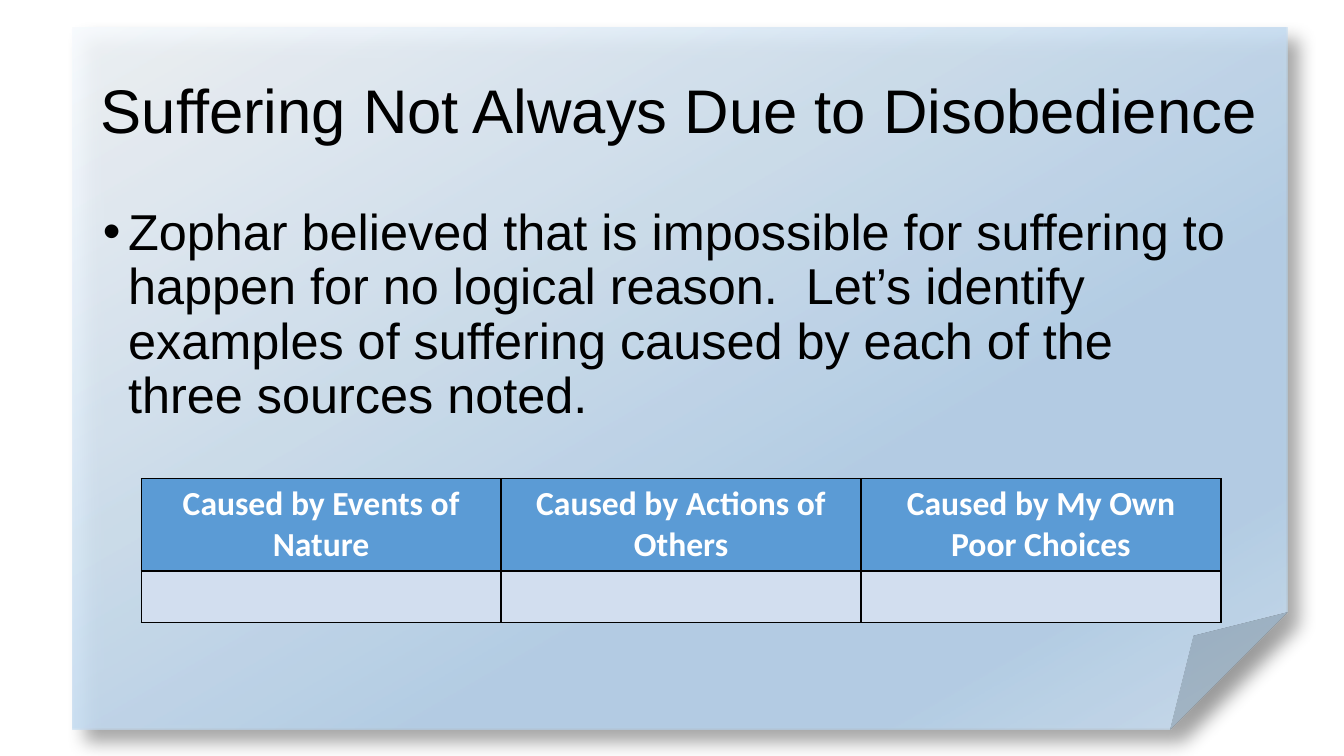
import pptx
import pptx.dml.color
import pptx.enum.shapes
import pptx.enum.text
import pptx.oxml
import pptx.util
from pptx.util import Inches, Pt

COLORS = {
    "text": "000000",
    "border": "000000",
    "shadow": "000000",
    "header_text": "FFFFFF",
    "header_fill": "5B9BD5",
    "answer_fill": "D2DEEF",
    "paper_light": "F7FAFD",
    "paper_mid": "B5D2EC",
    "paper_end": "CEE1F2",
}
NS = 'xmlns:a="http://schemas.openxmlformats.org/drawingml/2006/main"'
ALIGN = pptx.enum.text.PP_ALIGN
ANCHOR = pptx.enum.text.MSO_ANCHOR


def rgb(name):
    return pptx.dml.color.RGBColor.from_string(COLORS[name])


def add_run(paragraph, text, font, size, color, bold=False):
    run = paragraph.add_run()
    run.text = text
    run.font.name = font
    run.font.size = Pt(size)
    run.font.bold = bold
    run.font.color.rgb = rgb(color)


presentation = pptx.Presentation()
presentation.slide_width = Inches(13.33)
presentation.slide_height = Inches(7.5)
slide = presentation.slides.add_slide(presentation.slide_layouts[1])

# Folded paper behind the text
paper = slide.shapes.add_shape(
    pptx.enum.shapes.MSO_SHAPE.FOLDED_CORNER,
    Inches(0.72), Inches(0.27), Inches(12.05), Inches(6.97))
paper.line.fill.background()
stops = "".join(
    f'<a:gs pos="{position * 1000}"><a:srgbClr val="{COLORS[name]}">'
    '<a:alpha val="87000"/></a:srgbClr></a:gs>'
    for position, name in [(0, "paper_light"), (64, "paper_mid"),
                           (83, "paper_mid"), (100, "paper_end")])
gradient = pptx.oxml.parse_xml(
    f'<a:gradFill {NS} rotWithShape="1"><a:gsLst>{stops}</a:gsLst>'
    '<a:lin ang="3600000" scaled="0"/></a:gradFill>')
shadow = pptx.oxml.parse_xml(
    f'<a:effectLst {NS}><a:outerShdw blurRad="{Pt(13)}" dist="{Pt(13)}" '
    f'dir="2700000" algn="tl" rotWithShape="0"><a:srgbClr val="{COLORS["shadow"]}">'
    '<a:alpha val="40000"/></a:srgbClr></a:outerShdw></a:effectLst>')
paper_properties = paper._element.spPr
paper_properties.prstGeom.addnext(gradient)
paper_properties.append(shadow)
slide.shapes._spTree.insert(2, paper._element)

# Title
title = slide.shapes.title
title.left, title.top = Inches(0.77), Inches(0.4)
title.width, title.height = Inches(11.94), Inches(1.45)
title.text_frame.vertical_anchor = ANCHOR.MIDDLE
title.text_frame.auto_size = pptx.enum.text.MSO_AUTO_SIZE.NONE
heading = title.text_frame.paragraphs[0]
heading.alignment = ALIGN.CENTER
heading.line_spacing = 0.9
add_run(heading, "Suffering Not Always Due to Disobedience", "Arial", 44, "text")

# Discussion prompt
body = slide.placeholders[1]
body.left, body.top = Inches(0.92), Inches(2)
body.width, body.height = Inches(11.5), Inches(4.76)
body.text_frame.auto_size = pptx.enum.text.MSO_AUTO_SIZE.NONE
prompt = body.text_frame.paragraphs[0]
prompt_properties = prompt._p.get_or_add_pPr()
prompt_properties.set("marL", str(Inches(0.25)))
prompt_properties.set("indent", str(-Inches(0.25)))
for bullet in ('<a:buFont {} typeface="Arial"/>', '<a:buChar {} char="•"/>'):
    prompt_properties.append(pptx.oxml.parse_xml(bullet.format(NS)))
prompt.line_spacing = 0.9
prompt.space_before = Pt(0)
add_run(prompt,
        "Zophar believed that is impossible for suffering to happen for no "
        "logical reason.  Let’s identify examples of suffering caused by each "
        "of the three sources noted.", "Arial", 36, "text")

# Table of causes, with an empty row for answers
causes = ["Caused by Events of Nature", "Caused by Actions of Others",
          "Caused by My Own Poor Choices"]
table = slide.shapes.add_table(
    2, len(causes), Inches(1.4), Inches(4.75), Inches(10.72), Inches(1.42)).table
table.rows[0].height = Inches(0.91)
table.rows[1].height = Inches(0.51)
for column, cause in enumerate(causes):
    table.columns[column].width = Inches(3.57)
    header, answer = table.cell(0, column), table.cell(1, column)
    header.vertical_anchor = ANCHOR.MIDDLE
    cause_line = header.text_frame.paragraphs[0]
    cause_line.alignment = ALIGN.CENTER
    add_run(cause_line, cause, "Calibri", 24, "header_text", bold=True)
    for cell, fill in [(header, "header_fill"), (answer, "answer_fill")]:
        cell.fill.solid()
        cell.fill.fore_color.rgb = rgb(fill)
        for index, side in enumerate(["lnL", "lnR", "lnT", "lnB"]):
            border = pptx.oxml.parse_xml(
                f'<a:{side} {NS} w="{Pt(1)}"><a:solidFill><a:srgbClr '
                f'val="{COLORS["border"]}"/></a:solidFill></a:{side}>')
            cell._tc.get_or_add_tcPr().insert(index, border)

presentation.save("out.pptx")
